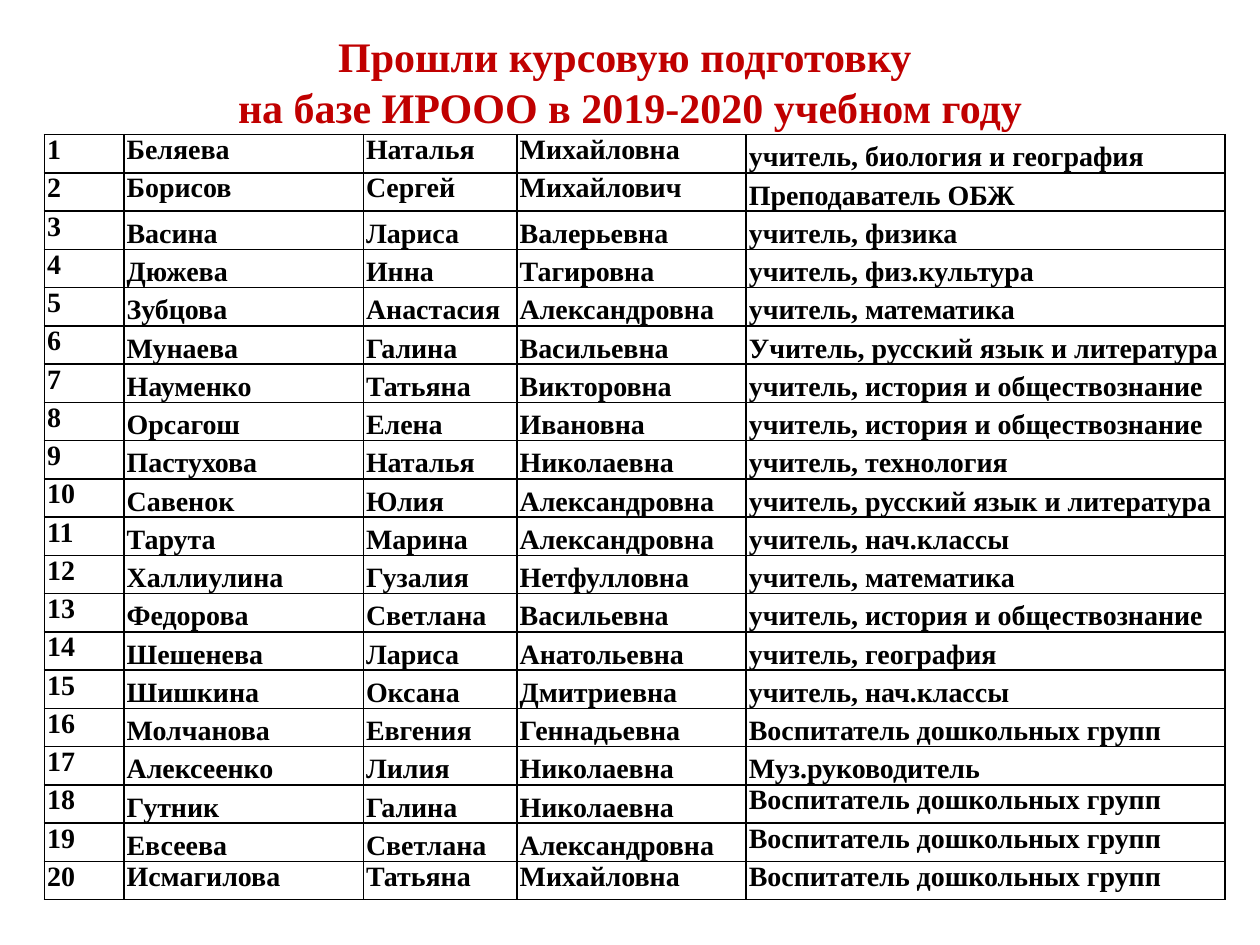
"""Build a slide listing the staff who completed training courses."""
from dataclasses import dataclass

from lxml.etree import SubElement
from pptx import Presentation
from pptx.dml.color import RGBColor
from pptx.enum.text import MSO_ANCHOR, MSO_AUTO_SIZE, PP_ALIGN
from pptx.oxml.ns import qn
from pptx.slide import Slide
from pptx.table import _Cell
from pptx.util import Pt

TOP, BOTTOM = MSO_ANCHOR.TOP, MSO_ANCHOR.BOTTOM


@dataclass(frozen=True)
class Theme:
    """Fonts, sizes and colours of the slide."""
    font: str = "Times New Roman"
    title_size: int = 24
    body_size: int = 16
    title_color: str = "C00000"
    text_color: str = "000000"
    border_color: str = "000000"
    border_width: int = 1


@dataclass(frozen=True)
class Teacher:
    """One table row with the vertical anchors of its name and role."""
    surname: str
    first_name: str
    patronymic: str
    role: str
    name_anchor: MSO_ANCHOR = BOTTOM
    role_anchor: MSO_ANCHOR = BOTTOM


THEME = Theme()
TITLE = "Прошли курсовую подготовку \vна базе ИРООО в 2019-2020 учебном году"
HISTORY = "учитель, история и обществознание"
PRIMARY = "учитель, нач.классы"
MATHS = "учитель, математика"
PRESCHOOL = "Воспитатель дошкольных групп"
TEACHERS = [
    Teacher("Беляева", "Наталья", "Михайловна", "учитель, биология и география", TOP),
    Teacher("Борисов", "Сергей", "Михайлович", "Преподаватель ОБЖ", TOP),
    Teacher("Васина", "Лариса", "Валерьевна", "учитель, физика"),
    Teacher("Дюжева", "Инна", "Тагировна", "учитель, физ.культура"),
    Teacher("Зубцова", "Анастасия", "Александровна", MATHS),
    Teacher("Мунаева", "Галина", "Васильевна", "Учитель, русский язык и литература"),
    Teacher("Науменко", "Татьяна", "Викторовна", HISTORY),
    Teacher("Орсагош", "Елена", "Ивановна", HISTORY),
    Teacher("Пастухова", "Наталья", "Николаевна", "учитель, технология"),
    Teacher("Савенок", "Юлия", "Александровна", "учитель, русский язык и литература"),
    Teacher("Тарута", "Марина", "Александровна", PRIMARY),
    Teacher("Халлиулина", "Гузалия", "Нетфулловна", MATHS),
    Teacher("Федорова", "Светлана", "Васильевна", HISTORY),
    Teacher("Шешенева", "Лариса", "Анатольевна", "учитель, география"),
    Teacher("Шишкина", "Оксана", "Дмитриевна", PRIMARY),
    Teacher("Молчанова", "Евгения", "Геннадьевна", PRESCHOOL),
    Teacher("Алексеенко", "Лилия", "Николаевна", "Муз.руководитель"),
    Teacher("Гутник", "Галина", "Николаевна", PRESCHOOL, role_anchor=TOP),
    Teacher("Евсеева", "Светлана", "Александровна", PRESCHOOL, role_anchor=TOP),
    Teacher("Исмагилова", "Татьяна", "Михайловна", PRESCHOOL, TOP, TOP),
]
COLUMN_WIDTHS = [45.4, 136.8, 87.8, 131, 273.6]
ROW_HEIGHT = 21.88
NUMBER_INDENT = 27.36


def style_font(font, size: int, color: str) -> None:
    """Apply the bold slide typeface in the given size and colour."""
    font.name = THEME.font
    font.size = Pt(size)
    font.bold = True
    font.color.rgb = RGBColor.from_string(color)


def add_title(page: Slide) -> None:
    """Place and format the title placeholder."""
    title = page.shapes.title
    title.left, title.top, title.width, title.height = Pt(36), Pt(21.6), Pt(648), Pt(49.7)
    frame = title.text_frame
    frame.text = TITLE
    frame.auto_size = MSO_AUTO_SIZE.NONE
    frame.vertical_anchor = MSO_ANCHOR.MIDDLE
    para = frame.paragraphs[0]
    para.alignment = PP_ALIGN.CENTER
    style_font(para.font, THEME.title_size, THEME.title_color)


def add_borders(cell: _Cell) -> None:
    """Draw a thin solid line on every side of a cell."""
    properties = cell._tc.get_or_add_tcPr()
    for position, side in enumerate(("lnL", "lnR", "lnT", "lnB")):
        line = SubElement(properties, qn(f"a:{side}"), w=str(Pt(THEME.border_width)))
        fill = SubElement(line, qn("a:solidFill"))
        SubElement(fill, qn("a:srgbClr"), val=THEME.border_color)
        properties.insert(position, line)


def fill_cell(cell: _Cell, text: str, anchor: MSO_ANCHOR) -> None:
    """Write and format one table cell."""
    cell.text = text
    cell.vertical_anchor = anchor
    cell.margin_left = cell.margin_right = Pt(1.6)
    cell.margin_top = cell.margin_bottom = Pt(0)
    cell.fill.background()
    style_font(cell.text_frame.paragraphs[0].font, THEME.body_size, THEME.text_color)
    add_borders(cell)


def indent_number(cell: _Cell) -> None:
    """Give a row number its hanging indent."""
    properties = cell.text_frame.paragraphs[0]._p.get_or_add_pPr()
    properties.set("marL", str(Pt(NUMBER_INDENT)))
    properties.set("indent", str(-Pt(NUMBER_INDENT)))


def add_teacher_table(page: Slide, teachers: list[Teacher]) -> None:
    """Add the numbered table of teachers."""
    table = page.shapes.add_table(
        len(teachers), len(COLUMN_WIDTHS), Pt(25.4), Pt(77),
        Pt(sum(COLUMN_WIDTHS)), Pt(ROW_HEIGHT * len(teachers)),
    ).table
    table.first_row = table.horz_banding = False
    for column, width in zip(table.columns, COLUMN_WIDTHS):
        column.width = Pt(width)
    for number, (row, teacher) in enumerate(zip(table.rows, teachers), start=1):
        row.height = Pt(ROW_HEIGHT)
        texts = (str(number), teacher.surname, teacher.first_name, teacher.patronymic, teacher.role)
        anchors = (TOP, *[teacher.name_anchor] * 3, teacher.role_anchor)
        for cell, text, anchor in zip(row.cells, texts, anchors):
            fill_cell(cell, text, anchor)
        indent_number(row.cells[0])


def main() -> None:
    """Create and save the deck."""
    deck = Presentation()
    deck.slide_width, deck.slide_height = Pt(720), Pt(540)
    page = deck.slides.add_slide(deck.slide_layouts[5])
    add_title(page)
    add_teacher_table(page, TEACHERS)
    deck.save("out.pptx")


if __name__ == "__main__":
    main()
